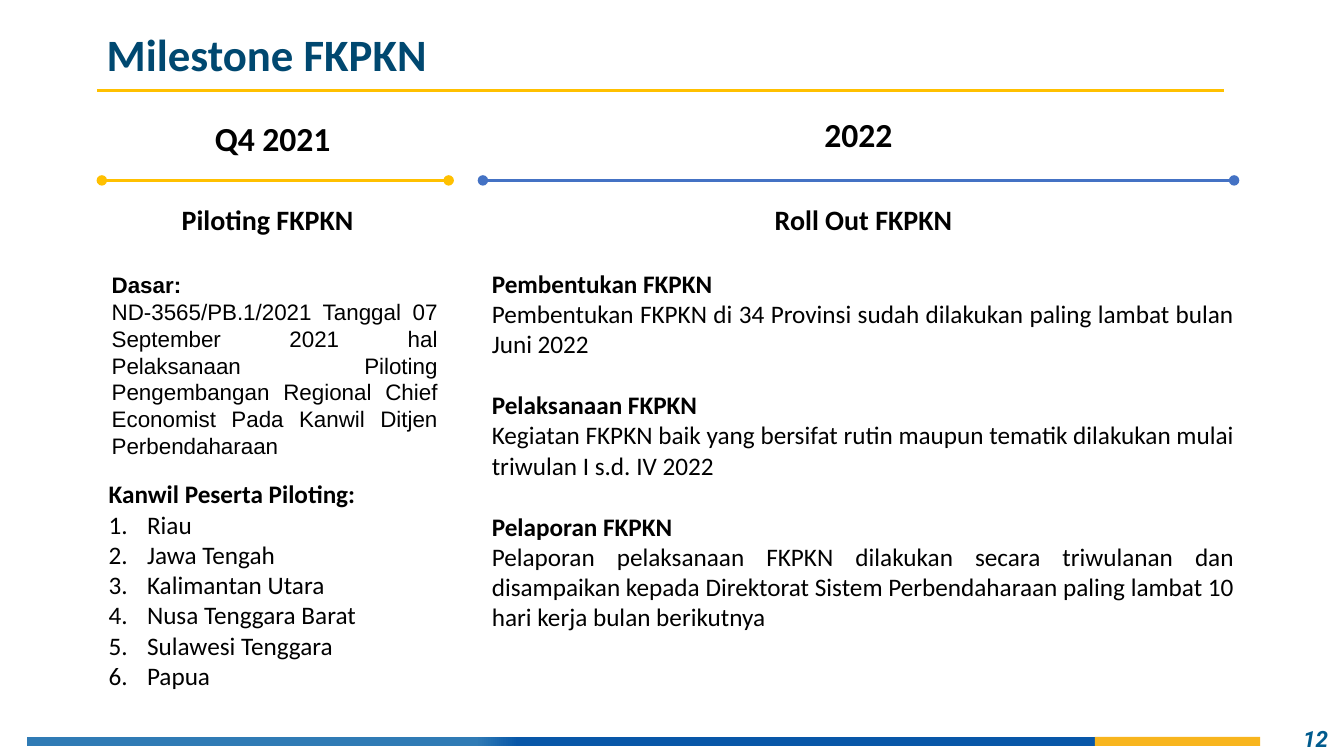
from lxml import etree
from pptx import Presentation
from pptx.dml.color import RGBColor
from pptx.enum.shapes import MSO_CONNECTOR, MSO_SHAPE
from pptx.enum.text import MSO_ANCHOR, PP_ALIGN
from pptx.oxml.ns import qn
from pptx.util import Pt

PX = 9144  # 100 px to the inch
LEFT, MID, RIGHT, FULL = (PP_ALIGN.LEFT, PP_ALIGN.CENTER, PP_ALIGN.RIGHT,
                          PP_ALIGN.JUSTIFY)
RECT = MSO_SHAPE.RECTANGLE
STRAIGHT = MSO_CONNECTOR.STRAIGHT
CENTER = MSO_ANCHOR.MIDDLE

COLORS = {
    "title": "004870", "page": "005B8E", "text": "000000",
    "gold": "FFC000", "blue": "4472C4", "amber": "F8B51E",
    "light": "307BB5", "deep": "0857A8",
}

BASIS = [
    ("Dasar:", "ND-3565/PB.1/2021 Tanggal 07 September 2021 hal Pelaksanaan "
     "Piloting Pengembangan Regional Chief Economist Pada Kanwil Ditjen "
     "Perbendaharaan"),
]
REGIONS = ["Riau", "Jawa Tengah", "Kalimantan Utara", "Nusa Tenggara Barat",
           "Sulawesi Tenggara", "Papua"]
STEPS = [
    ("Pembentukan FKPKN", "Pembentukan FKPKN di 34 Provinsi sudah dilakukan "
     "paling lambat bulan Juni 2022"),
    ("Pelaksanaan FKPKN", "Kegiatan FKPKN baik yang bersifat rutin maupun "
     "tematik dilakukan mulai triwulan I s.d. IV 2022"),
    ("Pelaporan FKPKN", "Pelaporan pelaksanaan FKPKN dilakukan secara "
     "triwulanan dan disampaikan kepada Direktorat Sistem Perbendaharaan "
     "paling lambat 10 hari kerja bulan berikutnya"),
]


def rgb(name):
    return RGBColor.from_string(COLORS[name])


def add_bar(slide, x, y, w, h):
    bar = slide.shapes.add_shape(RECT, x * PX, y * PX, w * PX, h * PX)
    bar.shadow.inherit = False
    bar.line.fill.background()
    return bar


def add_rule(slide, x1, x2, y, color, width, dots=False):
    """Draw a level line, with a round dot at each end if asked."""
    rule = slide.shapes.add_connector(STRAIGHT, x1 * PX, y * PX,
                                      x2 * PX, y * PX)
    rule.line.color.rgb = rgb(color)
    rule.line.width = Pt(width)
    if dots:
        line = rule.line._get_or_add_ln()
        for end in ("a:headEnd", "a:tailEnd"):
            etree.SubElement(line, qn(end), type="oval")
    etree.SubElement(rule._element.spPr, qn("a:effectLst"))


def add_frame(slide, x, y, w, h):
    box = slide.shapes.add_textbox(x * PX, y * PX, w * PX, h * PX)
    box.text_frame.word_wrap = True
    return box.text_frame


def style(para, size, bold, align=LEFT, color="text", face="Calibri"):
    para.alignment = align
    for run in para.runs:
        font = run.font
        font.name, font.size, font.bold = face, Pt(size), bold
        font.color.rgb = rgb(color)


def add_label(slide, x, y, w, h, text, size, **look):
    frame = add_frame(slide, x, y, w, h)
    frame.text = text
    style(frame.paragraphs[0], size, True, **look)
    return frame


def add_notes(slide, x, y, w, h, pairs, size, gap=0, face="Calibri"):
    """Stack bold heads over justified text, gap points between pairs."""
    frame = add_frame(slide, x, y, w, h)
    frame.text = "\n".join(part for pair in pairs for part in pair)
    for i, para in enumerate(frame.paragraphs):
        head = i % 2 == 0
        style(para, size, head, FULL, face=face)
        if head and i:
            para.space_before = Pt(gap)


def add_list(slide, x, y, w, h, head, items, size):
    frame = add_label(slide, x, y, w, h, head, size)
    for item in items:
        para = frame.add_paragraph()
        para.text = item
        props = para._p.get_or_add_pPr()
        props.set("marL", str(38 * PX))
        props.set("indent", str(-38 * PX))
        etree.SubElement(props, qn("a:buFont"), typeface="+mj-lt")
        etree.SubElement(props, qn("a:buAutoNum"), type="arabicPeriod")
        style(para, size, False)


def add_footer(slide):
    band = add_bar(slide, 27, 731, 1059, 9)
    band.fill.gradient()
    band.fill.gradient_angle = 0
    stops = zip(band.fill.gradient_stops, (0.42, 0.46), ("light", "deep"))
    for stop, place, color in stops:
        stop.position = place
        stop.color.rgb = rgb(color)
    tip = add_bar(slide, 1086, 731, 164, 9)
    tip.fill.solid()
    tip.fill.fore_color.rgb = rgb("amber")
    page = add_label(slide, 1270, 720, 57, 25, "12", 16, align=RIGHT,
                     color="page", face="Roboto")
    page.vertical_anchor = CENTER
    page.paragraphs[0].runs[0].font.italic = True


def main():
    deck = Presentation()
    deck.slide_width, deck.slide_height = 1333 * PX, 750 * PX
    slide = deck.slides.add_slide(deck.slide_layouts[6])

    add_footer(slide)
    add_rule(slide, 96, 1214, 90, "gold", 2.25)
    title = add_label(slide, 96, 28, 1118, 65, "Milestone FKPKN", 32,
                      color="title")
    title.paragraphs[0].line_spacing = 0.9

    add_rule(slide, 479, 1224, 179, "blue", 2.5, dots=True)
    add_rule(slide, 101, 445, 179, "gold", 2.5, dots=True)
    add_label(slide, 124, 112, 293, 50, "Q4 2021", 24, align=MID)
    add_label(slide, 705, 108, 293, 50, "2022", 24, align=MID)
    add_label(slide, 114, 196, 303, 44, "Piloting FKPKN", 20, align=MID)
    add_label(slide, 705, 196, 303, 44, "Roll Out FKPKN", 20, align=MID)

    add_notes(slide, 101, 264, 343, 199, BASIS, 16, face="Arial")
    add_list(slide, 98, 470, 349, 222, "Kanwil Peserta Piloting:", REGIONS, 18)
    add_notes(slide, 478, 261, 756, 434, STEPS, 18, gap=22)
    deck.save("out.pptx")


if __name__ == "__main__":
    main()
